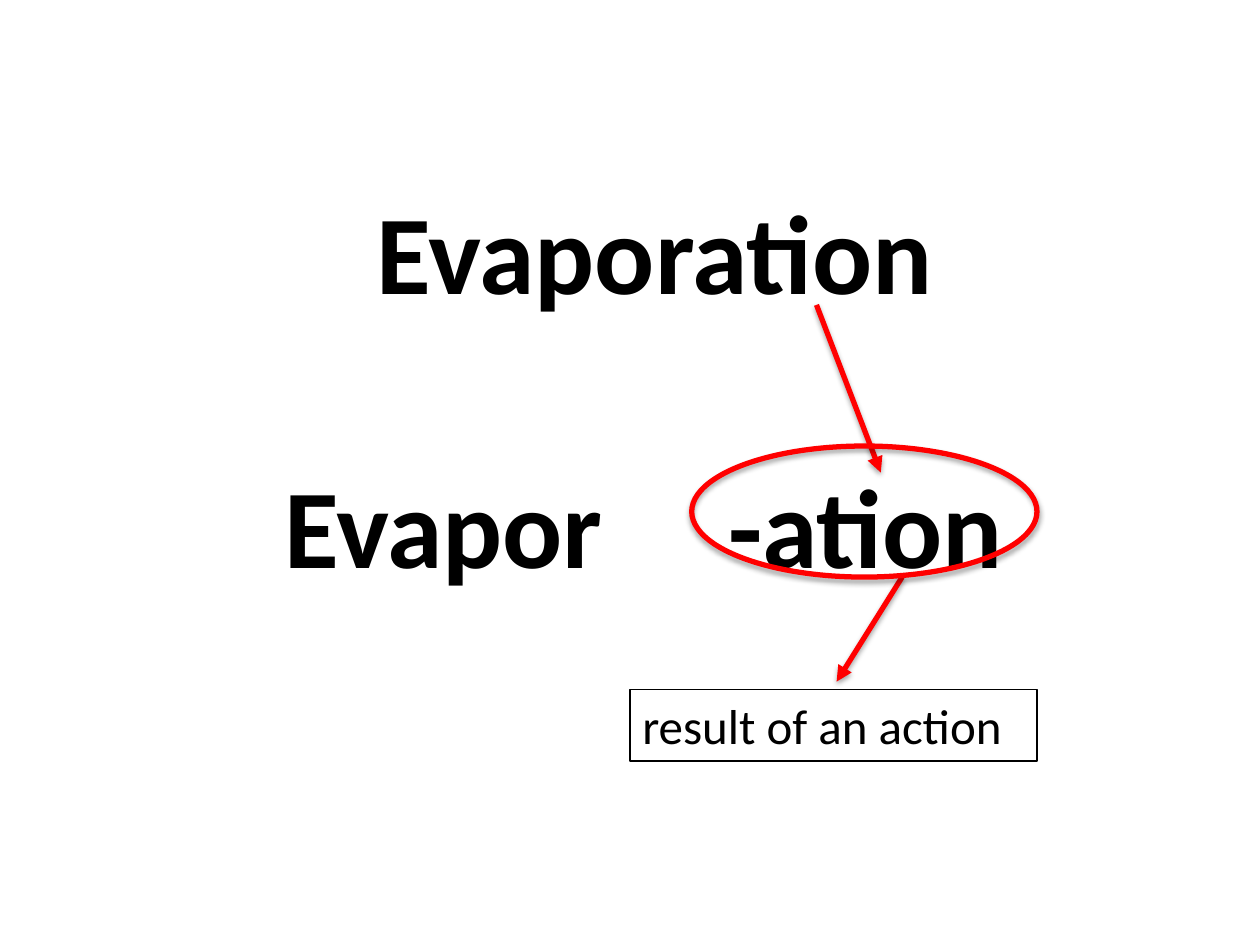
from dataclasses import dataclass

from lxml.etree import SubElement
from pptx import Presentation
from pptx.dml.color import RGBColor
from pptx.enum.shapes import MSO_CONNECTOR as Connector, MSO_SHAPE as Shape
from pptx.enum.text import MSO_ANCHOR as Anchor, MSO_AUTO_SIZE as AutoSize, PP_ALIGN as Align
from pptx.oxml.ns import qn
from pptx.util import Inches, Pt


@dataclass(frozen=True)
class Theme:
    font: str = "Calibri"
    ink: RGBColor = RGBColor(0, 0, 0)
    accent: RGBColor = RGBColor(255, 0, 0)
    word_size: int = 64
    note_size: int = 28
    mark_width: float = 3
    frame_width: float = 0.75


THEME = Theme()


def place(shape, left, top, width, height):
    shape.left, shape.top = Inches(left), Inches(top)
    shape.width, shape.height = Inches(width), Inches(height)


def write(shape, text, size, bold=False, align=Align.LEFT):
    frame = shape.text_frame
    frame.word_wrap = True
    frame.auto_size = AutoSize.NONE
    frame.vertical_anchor = Anchor.TOP
    paragraph = frame.paragraphs[0]
    paragraph.alignment = align
    run = paragraph.add_run()
    run.text = text
    run.font.name = THEME.font
    run.font.size = Pt(size)
    run.font.bold = bold
    run.font.color.rgb = THEME.ink


def set_line(shape, color, width):
    shape.line.color.rgb = color
    shape.line.width = Pt(width)


def add_shadow(shape, opacity, distance):
    effects = SubElement(shape._element.spPr, qn("a:effectLst"))
    shadow = SubElement(effects, qn("a:outerShdw"), blurRad=str(Pt(3.1)),
                        dist=str(Pt(distance)), dir="5400000", rotWithShape="0")
    color = SubElement(shadow, qn("a:srgbClr"), val=str(THEME.ink))
    SubElement(color, qn("a:alpha"), val=str(opacity * 1000))


def add_title(slide, text):
    title = slide.shapes.title
    place(title, 2.16, 1.4, 6.07, 1.19)
    write(title, text, THEME.word_size, bold=True, align=Align.CENTER)


def add_word_part(slide, text, left, width):
    box = slide.shapes.add_textbox(Inches(left), Inches(3.57), Inches(width), Inches(1.19))
    write(box, text, THEME.word_size, bold=True)


def add_arrow(slide, start, end):
    points = [Inches(value) for value in (*start, *end)]
    arrow = slide.shapes.add_connector(Connector.STRAIGHT, *points)
    set_line(arrow, THEME.accent, THEME.mark_width)
    SubElement(arrow.line._get_or_add_ln(), qn("a:tailEnd"), type="triangle")
    add_shadow(arrow, 36, 1.6)


def add_note(slide, text):
    note = slide.shapes.add_textbox(Inches(5), Inches(5.47), Inches(3.23), Inches(0.57))
    set_line(note, THEME.ink, THEME.frame_width)
    write(note, text, THEME.note_size)


def add_ring(slide):
    ring = slide.shapes.add_shape(Shape.OVAL, Inches(5.49), Inches(3.54), Inches(2.74), Inches(1.04))
    ring.fill.background()
    set_line(ring, THEME.accent, THEME.mark_width)
    add_shadow(ring, 34, 1.8)


def main():
    presentation = Presentation()
    presentation.slide_width, presentation.slide_height = Inches(10), Inches(7.5)
    slide = presentation.slides.add_slide(presentation.slide_layouts[5])
    add_title(slide, "Evaporation")
    add_word_part(slide, "Evapor", 2.16, 3)
    add_word_part(slide, "-ation", 5.68, 2.55)
    add_arrow(slide, (6.48, 2.42), (6.99, 3.75))
    add_note(slide, "result of an action")
    add_arrow(slide, (7.16, 4.58), (6.64, 5.41))
    add_ring(slide)
    presentation.save("out.pptx")


if __name__ == "__main__":
    main()
